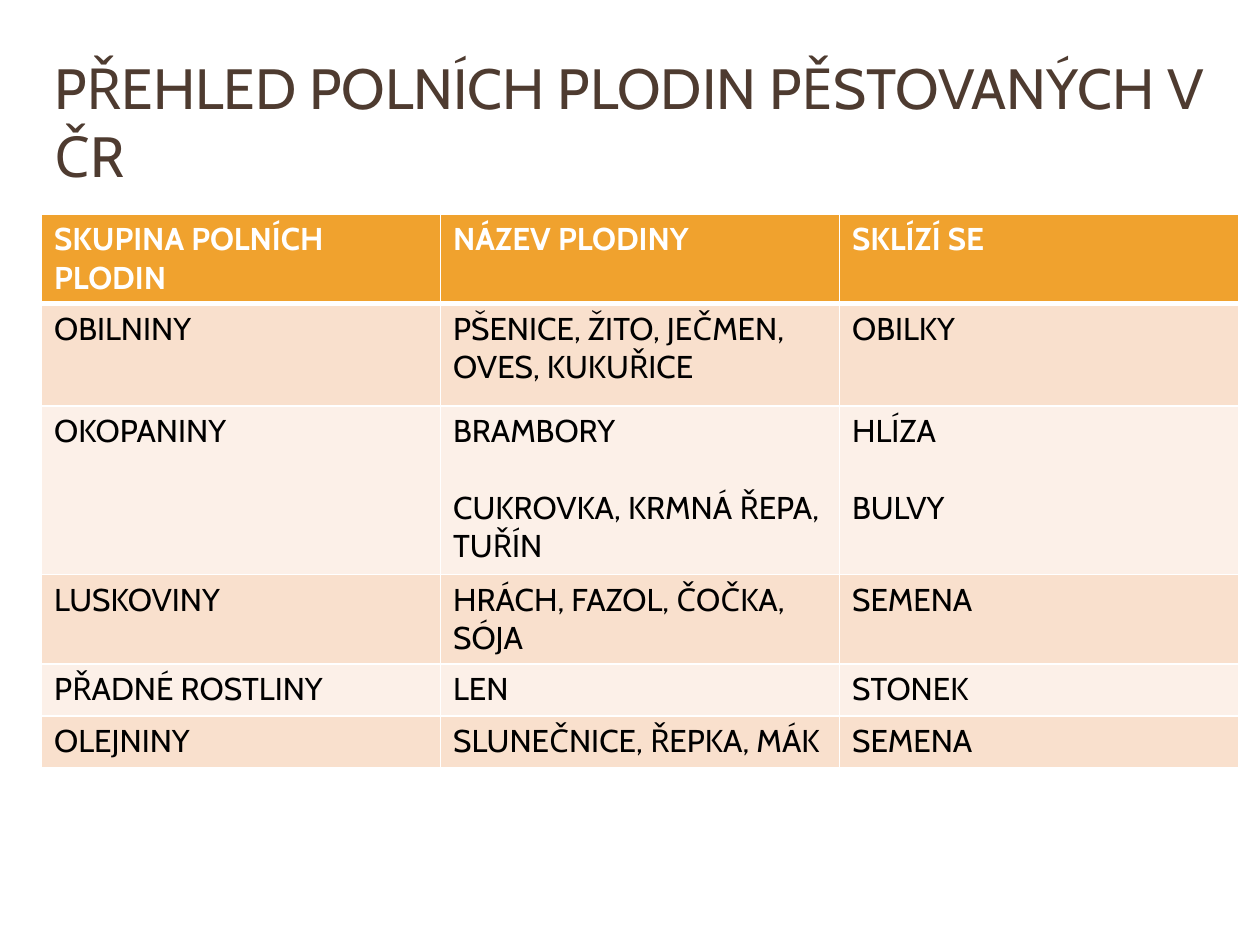
from dataclasses import dataclass

from lxml import etree
from pptx import Presentation
from pptx.dml.color import RGBColor
from pptx.enum.text import MSO_ANCHOR, MSO_AUTO_SIZE, PP_ALIGN
from pptx.oxml.ns import qn
from pptx.util import Inches, Pt

LEFT = PP_ALIGN.LEFT
MIDDLE = MSO_ANCHOR.MIDDLE
NO_AUTOFIT = MSO_AUTO_SIZE.NONE
TITLE_ONLY = 5


@dataclass(frozen=True)
class Theme:
    """Colours, type and line widths of the slide."""
    font: str = "Cabin"
    title_size: float = 32.4
    table_size: float = 18
    group_gap: float = 22
    title: str = "4E3B30"
    header_text: str = "FFFFFF"
    body_text: str = "000000"
    header_fill: str = "F0A22E"
    bands: tuple = ("F9E0CD", "FCF0E8")
    rule: str = "FFFFFF"
    thin: float = 1
    thick: float = 3


THEME = Theme()
HEADINGS = ("SKUPINA POLNÍCH PLODIN", "NÁZEV PLODINY", "SKLÍZÍ SE")
CROPS = (
    ("OBILNINY", "PŠENICE, ŽITO, JEČMEN, OVES, KUKUŘICE", "OBILKY"),
    ("OKOPANINY", "BRAMBORY\nCUKROVKA, KRMNÁ ŘEPA, TUŘÍN", "HLÍZA\nBULVY"),
    ("LUSKOVINY", "HRÁCH, FAZOL, ČOČKA, SÓJA", "SEMENA"),
    ("PŘADNÉ ROSTLINY", "LEN", "STONEK"),
    ("OLEJNINY", "SLUNEČNICE, ŘEPKA, MÁK", "SEMENA"),
)
ROW_HEIGHTS = (0.41, 0.81, 1.34, 0.71, 0.41, 0.41)


def write_text(frame, text, *, size, color, bold=False, gap=0):
    """Write one paragraph per line, with a gap before each later one."""
    frame.text = text
    for index, paragraph in enumerate(frame.paragraphs):
        paragraph.alignment = LEFT
        paragraph.space_before = Pt(gap if index else 0)
        for run in paragraph.runs:
            run.font.name = THEME.font
            run.font.size = Pt(size)
            run.font.bold = bold
            run.font.color.rgb = RGBColor.from_string(color)


def rule_cell(cell, top, bottom):
    """Draw the four borders of a cell, widths in points."""
    properties = cell._tc.get_or_add_tcPr()
    widths = {"lnL": THEME.thin, "lnR": THEME.thin, "lnT": top, "lnB": bottom}
    for side, width in widths.items():
        line = etree.SubElement(properties, qn(f"a:{side}"), w=str(Pt(width)))
        fill = etree.SubElement(line, qn("a:solidFill"))
        etree.SubElement(fill, qn("a:srgbClr"), val=THEME.rule)


def add_title(slide, left, top, width, height):
    """Place the slide heading in the title placeholder."""
    heading = slide.shapes.title
    heading.left, heading.top = Inches(left), Inches(top)
    heading.width, heading.height = Inches(width), Inches(height)
    frame = heading.text_frame
    frame.word_wrap = True
    frame.auto_size = NO_AUTOFIT
    frame.vertical_anchor = MIDDLE
    write_text(frame, "PŘEHLED POLNÍCH PLODIN PĚSTOVANÝCH V ČR",
               size=THEME.title_size, color=THEME.title)


def add_crop_table(slide, left, top, width, height):
    """Place the table of crop groups, crops and harvested parts."""
    rows = (HEADINGS, *CROPS)
    table = slide.shapes.add_table(
        len(rows), len(HEADINGS),
        Inches(left), Inches(top), Inches(width), Inches(height)).table
    for column in table.columns:
        column.width = Inches(width / len(HEADINGS))
    for index, (entries, row_height) in enumerate(zip(rows, ROW_HEIGHTS)):
        table.rows[index].height = Inches(row_height)
        header = index == 0
        band = THEME.bands[(index - 1) % len(THEME.bands)]
        fill = THEME.header_fill if header else band
        color = THEME.header_text if header else THEME.body_text
        for cell, entry in zip(table.rows[index].cells, entries):
            rule_cell(cell,
                      top=THEME.thick if index == 1 else THEME.thin,
                      bottom=THEME.thick if header else THEME.thin)
            cell.fill.solid()
            cell.fill.fore_color.rgb = RGBColor.from_string(fill)
            write_text(cell.text_frame, entry, size=THEME.table_size,
                       color=color, bold=header, gap=THEME.group_gap)


def main():
    """Build and save the slide."""
    deck = Presentation()
    deck.slide_width, deck.slide_height = Inches(10), Inches(7.5)
    slide = deck.slides.add_slide(deck.slide_layouts[TITLE_ONLY])
    add_title(slide, 0.33, 0.5, 9.5, 0.92)
    add_crop_table(slide, 0.33, 1.7, 9.5, sum(ROW_HEIGHTS))
    deck.save("out.pptx")


if __name__ == "__main__":
    main()
